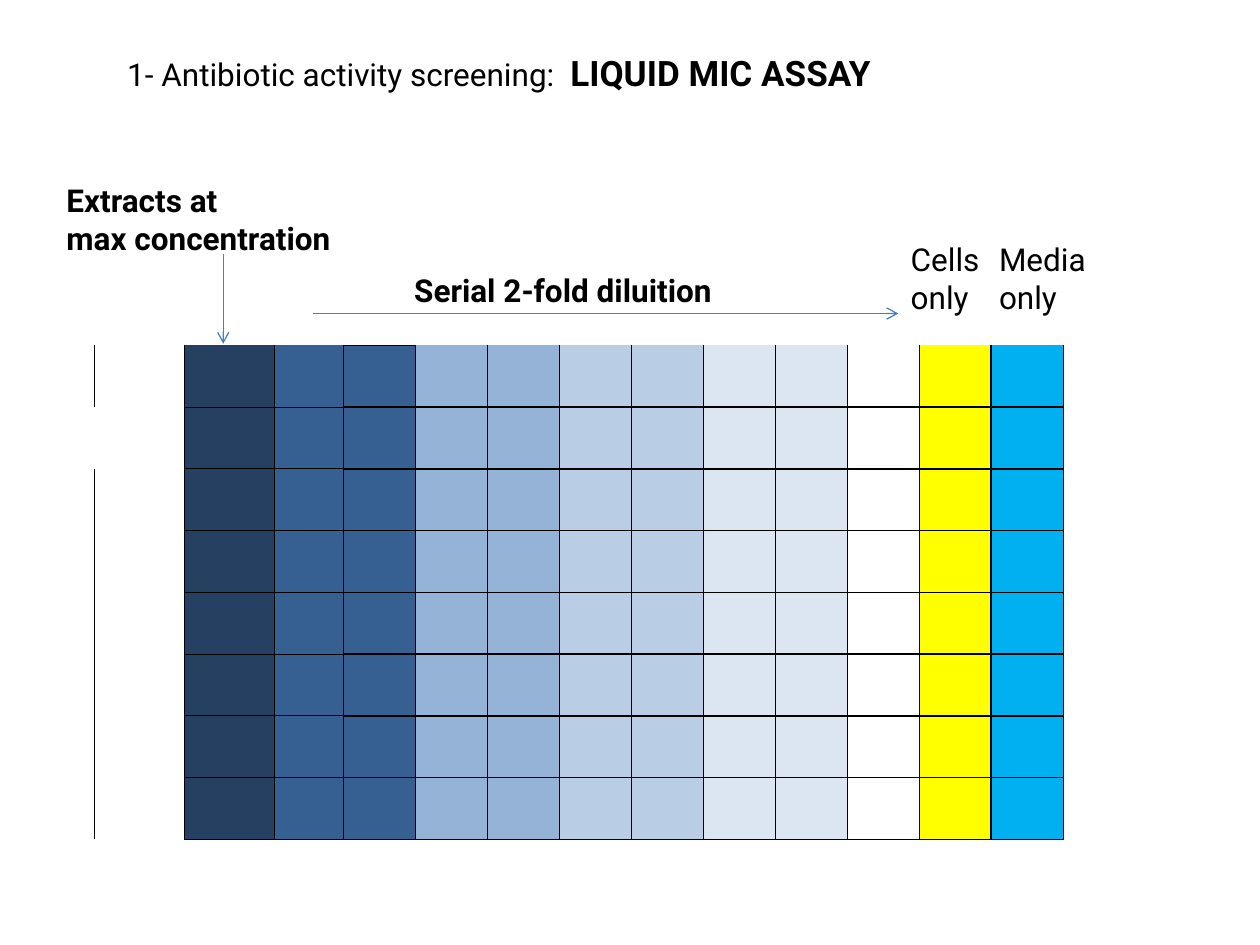
import pptx
import pptx.dml.color
import pptx.enum.shapes
import pptx.enum.text
import pptx.oxml.ns
import pptx.util
from lxml import etree

Cm = pptx.util.Cm
Pt = pptx.util.Pt
qn = pptx.oxml.ns.qn

FONT = "Roboto"
COLORS = {
    "text": "000000", "border": "000000", "arrow": "4B7EBC",
    "max": "254061", "high": "376092", "medium": "95B3D7",
    "low": "B9CDE5", "trace": "DCE6F2", "blank": "FFFFFF",
    "cells": "FFFF00", "media": "00B0F0",
}
# Fill of each plate column; the first column has none
COLUMN_FILLS = [None, "max", "high", "high", "medium", "medium", "low", "low",
                "trace", "trace", "blank", "cells", "media", "blank"]
COLUMN_WIDTHS = [1.81, 1.81, 1.4] + [1.45] * 10 + [1.48]
ROW_HEIGHTS = [1.04] + [1.245] * 8
LAST_ROW = len(ROW_HEIGHTS) - 1
CELLS, MEDIA, MARGIN = 11, 12, 13
NO_STYLE = "{2D5ABB26-0587-4C30-8999-92F81FD0307C}"


def rgb(name):
    return pptx.dml.color.RGBColor.from_string(COLORS[name])


def format_span(span, size=18, bold=False):
    span.font.name = FONT
    span.font.size = Pt(size)
    span.font.bold = bold
    span.font.color.rgb = rgb("text")


def add_title(page, plain, strong):
    title = page.shapes.title
    title.left, title.top, title.width, title.height = Cm(2.31), Cm(0.91), Cm(19), Cm(2.74)
    frame = title.text_frame
    frame.auto_size = pptx.enum.text.MSO_AUTO_SIZE.NONE
    frame.vertical_anchor = pptx.enum.text.MSO_ANCHOR.TOP
    para = frame.paragraphs[0]
    para.alignment = pptx.enum.text.PP_ALIGN.LEFT
    para.text = plain
    format_span(para.runs[0])
    span = para.add_run()
    span.text = strong
    format_span(span, 20, True)


def add_label(page, text, left, top, width, height, bold=False):
    box = page.shapes.add_textbox(Cm(left), Cm(top), Cm(width), Cm(height))
    box.text_frame.word_wrap = True
    box.text_frame.text = text
    for para in box.text_frame.paragraphs:
        format_span(para.runs[0], bold=bold)


def add_arrow(page, x1, y1, x2, y2):
    arrow = page.shapes.add_connector(
        pptx.enum.shapes.MSO_CONNECTOR.STRAIGHT, Cm(x1), Cm(y1), Cm(x2), Cm(y2))
    arrow.line.color.rgb = rgb("arrow")
    arrow.line.width = Pt(0.75)
    etree.SubElement(arrow.line._get_or_add_ln(), qn("a:tailEnd"), type="arrow")
    etree.SubElement(arrow._element.spPr, qn("a:effectLst"))


def well_borders(row, column):
    """Border widths in points by side, for one cell below the header row."""
    if column == 0:
        return {"R": 0.5} if row == 2 else {"L": 0.5, "R": 0.5}
    if column == MARGIN:
        return {"L": 0.5}
    if column in (1, 2):
        borders = {"L": 0.5, "R": 0.5, "T": 0.5, "B": 1 if row == LAST_ROW else 0.5}
    else:
        borders = {"L": 1 if column == MEDIA else 0.5,
                   "R": 1 if column == CELLS else 0.5,
                   "T": 1, "B": 0.5 if row == LAST_ROW else 1}
    if row == 1 and column != 3:
        del borders["T"]
    return borders


def set_borders(cell, borders):
    properties = cell._tc.get_or_add_tcPr()
    for side, width in borders.items():
        line = etree.SubElement(properties, qn("a:ln" + side), w=str(Pt(width)))
        fill = etree.SubElement(line, qn("a:solidFill"))
        etree.SubElement(fill, qn("a:srgbClr"), val=COLORS["border"])


def add_plate(page, left, top):
    frame = page.shapes.add_table(
        len(ROW_HEIGHTS), len(COLUMN_WIDTHS), Cm(left), Cm(top),
        Cm(sum(COLUMN_WIDTHS)), Cm(sum(ROW_HEIGHTS)))
    table = frame.table
    table.first_row = table.horz_banding = False
    table._tbl.tblPr.find(qn("a:tableStyleId")).text = NO_STYLE
    for column, width in zip(table.columns, COLUMN_WIDTHS):
        column.width = Cm(width)
    for row, height in zip(table.rows, ROW_HEIGHTS):
        row.height = Cm(height)
    table.cell(0, 2).merge(table.cell(0, 3))
    for row in range(len(ROW_HEIGHTS)):
        for column, name in enumerate(COLUMN_FILLS):
            cell = table.cell(row, column)
            if row > 0:
                set_borders(cell, well_borders(row, column))
            if row > 0 and name:
                cell.fill.solid()
                cell.fill.fore_color.rgb = rgb(name)
            else:
                cell.fill.background()


def main():
    deck = pptx.Presentation()
    deck.slide_width, deck.slide_height = Cm(25.4), Cm(19.05)
    page = deck.slides.add_slide(deck.slide_layouts[5])

    # Heading
    add_title(page, "1- Antibiotic activity screening:  ", "LIQUID MIC ASSAY")

    # Well plate
    add_plate(page, 1.91, 5.92)

    # Labels and arrows above the plate
    add_label(page, "Extracts at\nmax concentration", 1.09, 3.53, 14.4, 1.8, bold=True)
    add_arrow(page, 4.5, 5.13, 4.5, 6.93)
    add_label(page, "Serial 2-fold diluition", 8.1, 5.33, 13.41, 1.02, bold=True)
    add_arrow(page, 6.3, 6.32, 18.11, 6.32)
    add_label(page, "Cells only", 18.11, 4.72, 2.21, 1.8)
    add_label(page, "Media only", 19.89, 4.72, 2.59, 1.8)

    deck.save("out.pptx")


if __name__ == "__main__":
    main()
